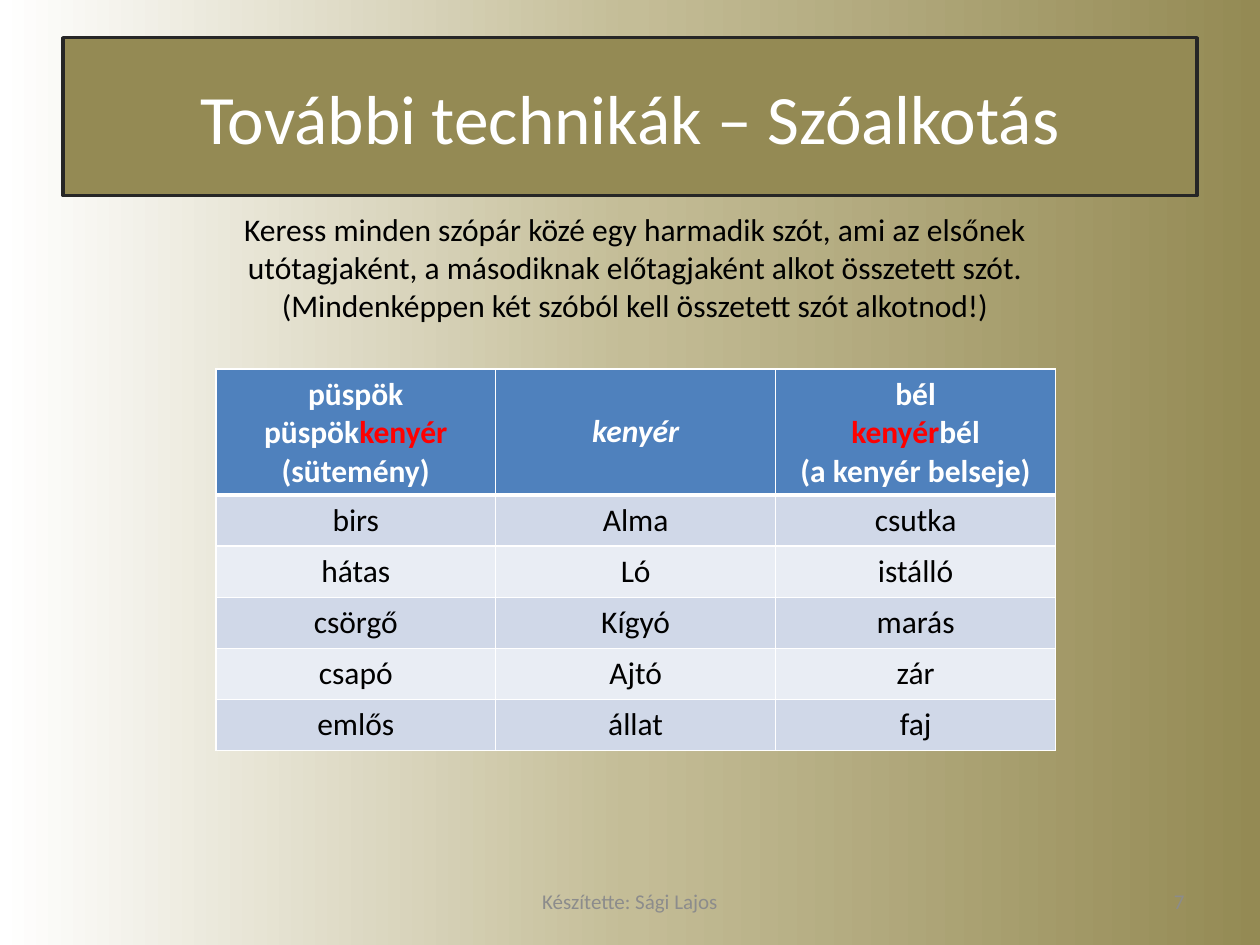
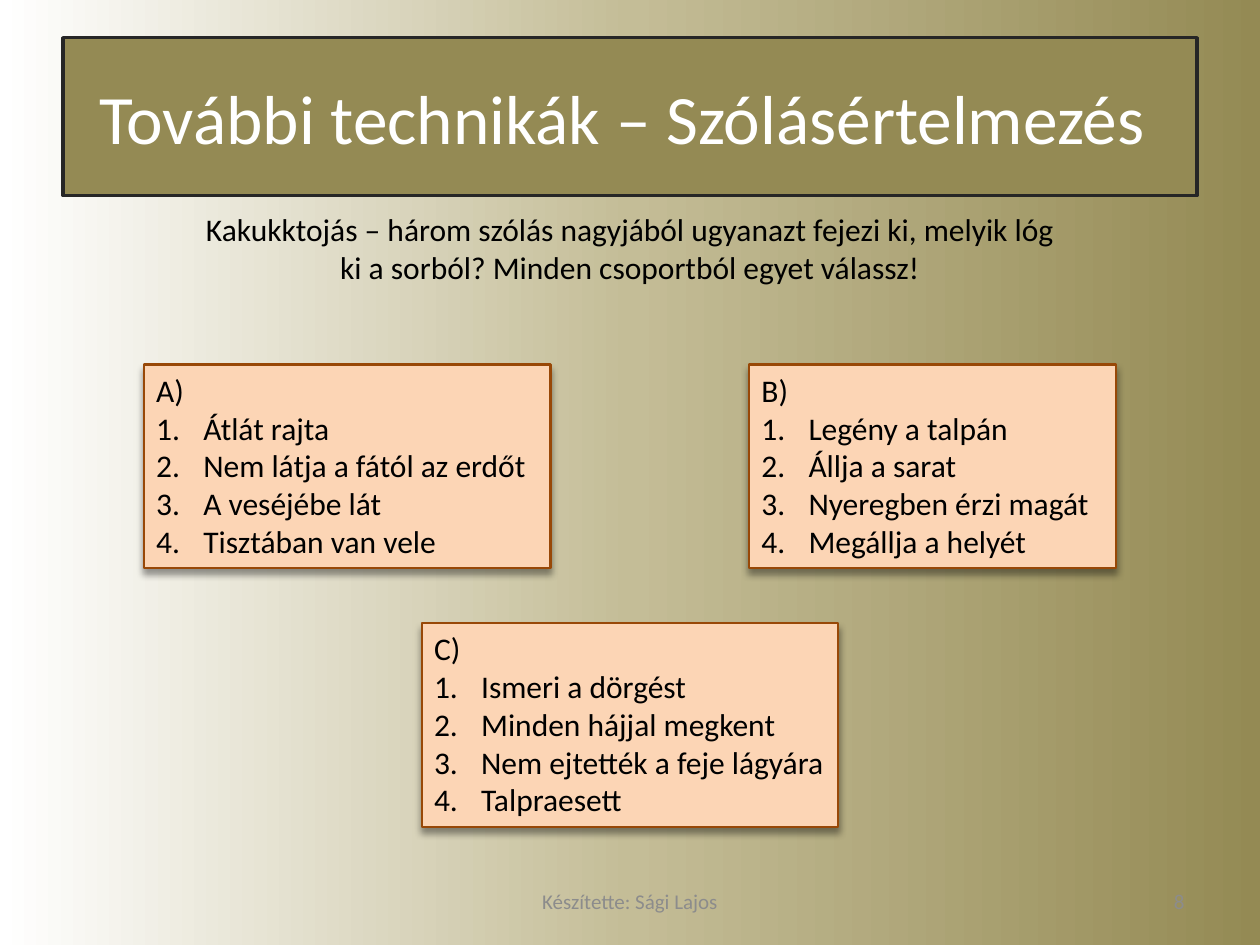
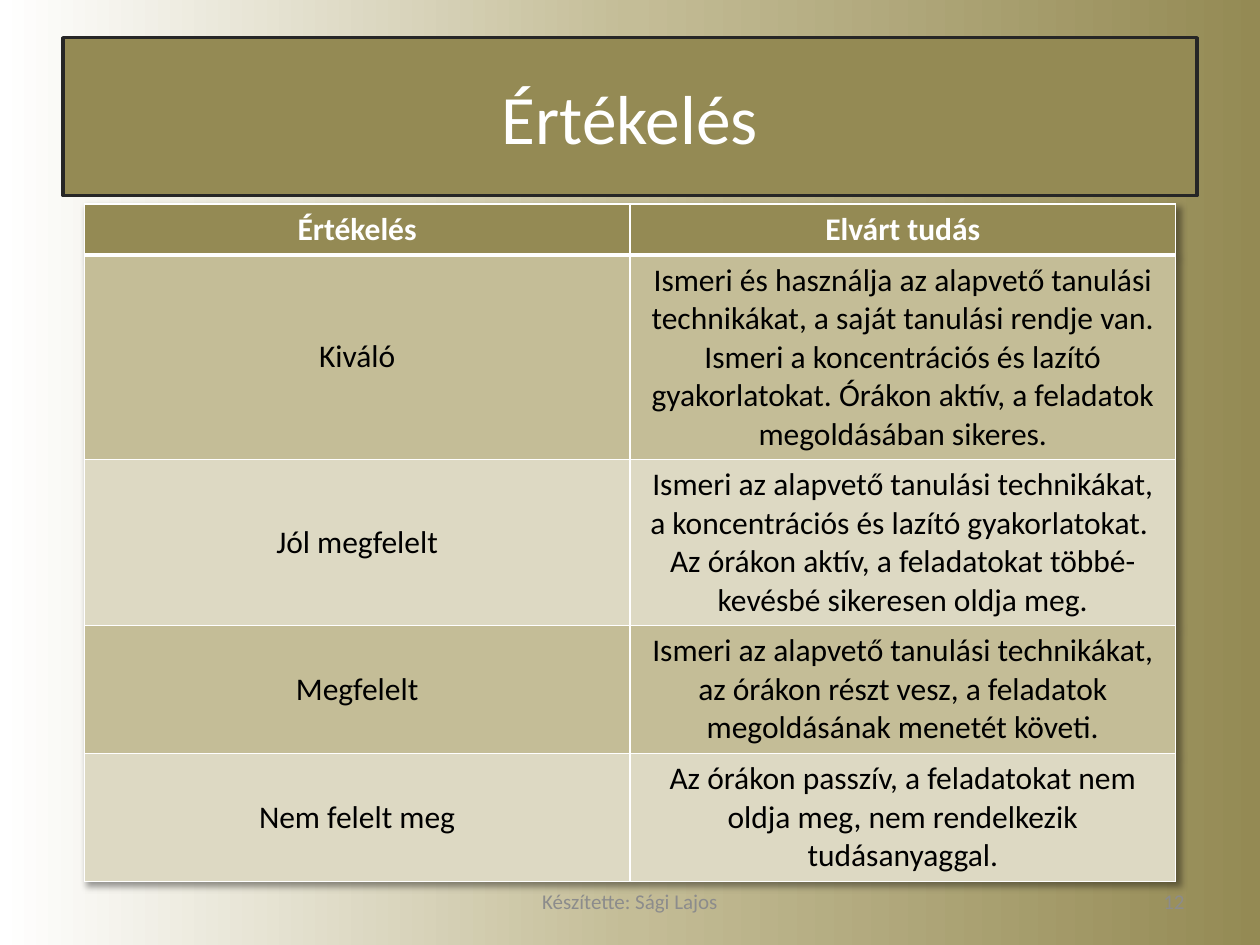
from copy import deepcopy

from lxml import etree
from pptx import Presentation
from pptx.dml import color
from pptx.enum import shapes, text
from pptx.oxml import ns
from pptx.util import Cm, Pt

FONT = "Calibri"
BLACK, WHITE, RED, GREY = "000000", "FFFFFF", "FF0000", "8C8C8C"
OLIVE, SAND, CREAM, CHARCOAL = "948A54", "C4BD97", "DDD9C3", "262626"
BLUE, PALE_BLUE, ICE = "4F81BD", "D0D8E8", "E9EDF4"
PEACH, BROWN = "FCD5B5", "984807"
PAGE_WIDTH, PAGE_HEIGHT = 25.4, 19.05
FOOTER_TOP, FOOTER_HEIGHT = 17.65, 1.02
ROW_HEIGHT = 1.03
PANEL_HEIGHT = 4.11
CENTER, LEFT, RIGHT = text.PP_ALIGN.CENTER, text.PP_ALIGN.LEFT, text.PP_ALIGN.RIGHT


def rgb(value):
    return color.RGBColor.from_string(value)


def child(parent, tag, **attributes):
    return etree.SubElement(parent, ns.qn(tag), {k: str(v) for k, v in attributes.items()})


def style(para, size, shade, align=CENTER, bold=False):
    para.alignment = align
    para.font.name = FONT
    para.font.size = Pt(size)
    para.font.bold = bold
    para.font.color.rgb = rgb(shade)


def write_lines(frame, lines, size, shade, align=CENTER, bold=False):
    for index, line in enumerate(lines):
        para = frame.add_paragraph() if index else frame.paragraphs[0]
        style(para, size, shade, align, bold)
        if "*" not in line:
            para.text = line
            continue
        for position, part in enumerate(line.split("*")):
            if part:
                span = para.add_run()
                span.text = part
                if position % 2:
                    span.font.color.rgb = rgb(RED)


def add_text(page, content, left, top, width, height, size, shade,
             align=CENTER, anchor=text.MSO_ANCHOR.TOP):
    box = page.shapes.add_textbox(Cm(left), Cm(top), Cm(width), Cm(height))
    box.text_frame.word_wrap = True
    box.text_frame.vertical_anchor = anchor
    write_lines(box.text_frame, [content], size, shade, align)


def fill_shadow(effects, direction):
    shadow = child(effects, "a:outerShdw", blurRad=Pt(4), dist=Pt(3),
                   dir=direction * 60000, algn="tl", rotWithShape=0)
    child(child(shadow, "a:srgbClr", val=BLACK), "a:alpha", val=40000)


def paint_background(master):
    fill = master.background.fill
    fill.gradient()
    fill.gradient_angle = 0
    stops = master.element.find(".//" + ns.qn("a:gsLst"))
    stops.insert(1, deepcopy(stops[0]))
    for stop, position, shade in zip(fill.gradient_stops, (0, 0.5, 1), (WHITE, SAND, OLIVE)):
        stop.position = position
        stop.color.rgb = rgb(shade)


def add_page(deck, heading, number):
    page = deck.slides.add_slide(deck.slide_layouts[5])
    title = page.shapes.title
    title.left, title.top, title.width, title.height = Cm(1.27), Cm(0.76), Cm(22.86), Cm(3.18)
    title.fill.solid()
    title.fill.fore_color.rgb = rgb(OLIVE)
    title.line.color.rgb = rgb(CHARCOAL)
    title.line.width = Pt(2)
    title.text_frame.auto_size = text.MSO_AUTO_SIZE.NONE
    title.text_frame.vertical_anchor = text.MSO_ANCHOR.MIDDLE
    write_lines(title.text_frame, [heading], 39.6, WHITE)
    for content, left, width, align in (("Készítette: Sági Lajos", 8.68, 8.04, CENTER),
                                        (number, 18.2, 5.93, RIGHT)):
        add_text(page, content, left, FOOTER_TOP, width, FOOTER_HEIGHT, 12, GREY,
                 align, text.MSO_ANCHOR.MIDDLE)
    return page


def set_borders(cell, top, bottom):
    properties = cell._tc.get_or_add_tcPr()
    sides = (("a:lnL", 1), ("a:lnR", 1), ("a:lnT", top), ("a:lnB", bottom))
    for index, (tag, width) in enumerate(sides):
        line = child(properties, tag, w=Pt(width))
        child(child(line, "a:solidFill"), "a:srgbClr", val=WHITE)
        properties.insert(index, line)


def add_grid(page, rows, left, top, width, heights, header, bands):
    frame = page.shapes.add_table(len(rows), len(rows[0]), Cm(left), Cm(top),
                                  Cm(width), Cm(sum(heights)))
    table = frame.table
    for row_index, (row, height) in enumerate(zip(rows, heights)):
        table.rows[row_index].height = Cm(height)
        is_header = row_index == 0
        for column_index, content in enumerate(row):
            cell = table.cell(row_index, column_index)
            cell.vertical_anchor = text.MSO_ANCHOR.MIDDLE
            cell.fill.solid()
            cell.fill.fore_color.rgb = rgb(header if is_header else bands[(row_index - 1) % 2])
            set_borders(cell, 3 if row_index == 1 else 1, 3 if is_header else 1)
            write_lines(cell.text_frame, content.split("\n"), 18,
                        WHITE if is_header else BLACK, bold=is_header)
    return table


def add_panel(page, letter, sayings, left, top, width):
    panel = page.shapes.add_shape(shapes.MSO_SHAPE.RECTANGLE, Cm(left), Cm(top),
                                  Cm(width), Cm(PANEL_HEIGHT))
    panel.fill.solid()
    panel.fill.fore_color.rgb = rgb(PEACH)
    panel.line.color.rgb = rgb(BROWN)
    panel.line.width = Pt(1.25)
    panel.shadow.inherit = False
    fill_shadow(panel._element.spPr.find(ns.qn("a:effectLst")), 90)
    frame = panel.text_frame
    frame.vertical_anchor = text.MSO_ANCHOR.TOP
    write_lines(frame, [letter + ")"] + sayings, 18, BLACK, LEFT)
    for para in frame.paragraphs[1:]:
        properties = para._p.get_or_add_pPr()
        properties.set("marL", str(Cm(0.95)))
        properties.set("indent", str(-Cm(0.95)))
        bullet = child(properties, "a:buAutoNum", type="arabicPeriod")
        properties.insert(0, bullet)


def add_word_page(deck):
    page = add_page(deck, "További technikák – Szóalkotás", "7")
    add_text(page, "Keress minden szópár közé egy harmadik szót, ami az elsőnek\v"
             "utótagjaként, a másodiknak előtagjaként alkot összetett szót.\v"
             "(Mindenképpen két szóból kell összetett szót alkotnod!)",
             3.1, 4.11, 19.41, 2.57, 18, BLACK)
    rows = [
        ("püspök\npüspök*kenyér *(sütemény)", "kenyér", "bél\n*kenyér*bél\n(a kenyér belseje)"),
        ("birs", "Alma", "csutka"),
        ("hátas", "Ló", "istálló"),
        ("csörgő", "Kígyó", "marás"),
        ("csapó", "Ajtó", "zár"),
        ("emlős", "állat", "faj"),
    ]
    table = add_grid(page, rows, 4.35, 7.44, 16.93, [2.54] + [ROW_HEIGHT] * 5,
                     BLUE, (PALE_BLUE, ICE))
    table.cell(0, 1).text_frame.paragraphs[0].font.italic = True


def add_saying_page(deck):
    page = add_page(deck, "További technikák – Szólásértelmezés ", "8")
    add_text(page, "Kakukktojás – három szólás nagyjából ugyanazt fejezi ki, melyik lóg "
             "ki a sorból? Minden csoportból egyet válassz!",
             3.7, 4.11, 18, 1.8, 18, BLACK)
    add_panel(page, "A", ["Átlát rajta", "Nem látja a fától az erdőt",
                          "A veséjébe lát", "Tisztában van vele"], 2.9, 7.35, 8.2)
    add_panel(page, "B", ["Legény a talpán", "Állja a sarat",
                          "Nyeregben érzi magát", "Megállja a helyét"], 15.1, 7.35, 7.4)
    add_panel(page, "C", ["Ismeri a dörgést", "Minden hájjal megkent",
                          "Nem ejtették a feje lágyára", "Talpraesett"], 8.5, 12.56, 8.4)


def add_grading_page(deck):
    page = add_page(deck, "Értékelés", "12")
    rows = [
        ("Értékelés", "Elvárt tudás"),
        ("Kiváló", "Ismeri és használja az alapvető tanulási technikákat, a saját tanulási "
         "rendje van. Ismeri a koncentrációs és lazító gyakorlatokat. Órákon aktív, "
         "a feladatok megoldásában sikeres."),
        ("Jól megfelelt", "Ismeri az alapvető tanulási technikákat, a koncentrációs és lazító "
         "gyakorlatokat.  Az órákon aktív, a feladatokat többé-kevésbé sikeresen oldja meg."),
        ("Megfelelt", "Ismeri az alapvető tanulási technikákat, az órákon részt vesz, "
         "a feladatok megoldásának menetét követi."),
        ("Nem felelt meg", "Az órákon passzív, a feladatokat nem oldja meg, "
         "nem rendelkezik tudásanyaggal."),
    ]
    table = add_grid(page, rows, 1.7, 4.11, 22, [ROW_HEIGHT, 4.12, 3.35, 2.58, 2.58],
                     OLIVE, (SAND, CREAM))
    properties = table._tbl.tblPr
    effects = child(properties, "a:effectLst")
    properties.insert(0, effects)
    fill_shadow(effects, 45)


def main():
    deck = Presentation()
    deck.slide_width, deck.slide_height = Cm(PAGE_WIDTH), Cm(PAGE_HEIGHT)
    paint_background(deck.slide_master)
    add_word_page(deck)
    add_saying_page(deck)
    add_grading_page(deck)
    deck.save("out.pptx")


if __name__ == "__main__":
    main()
